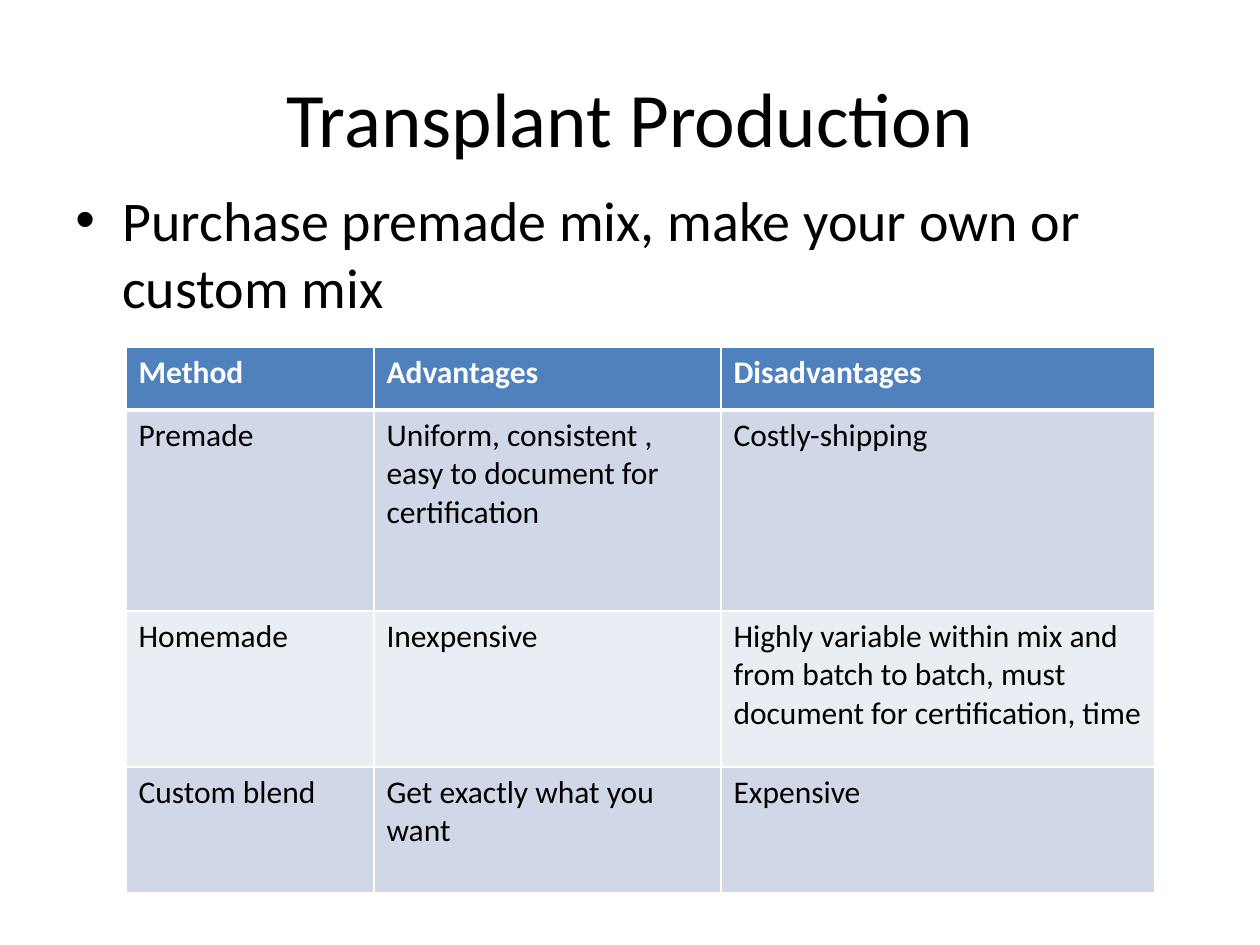
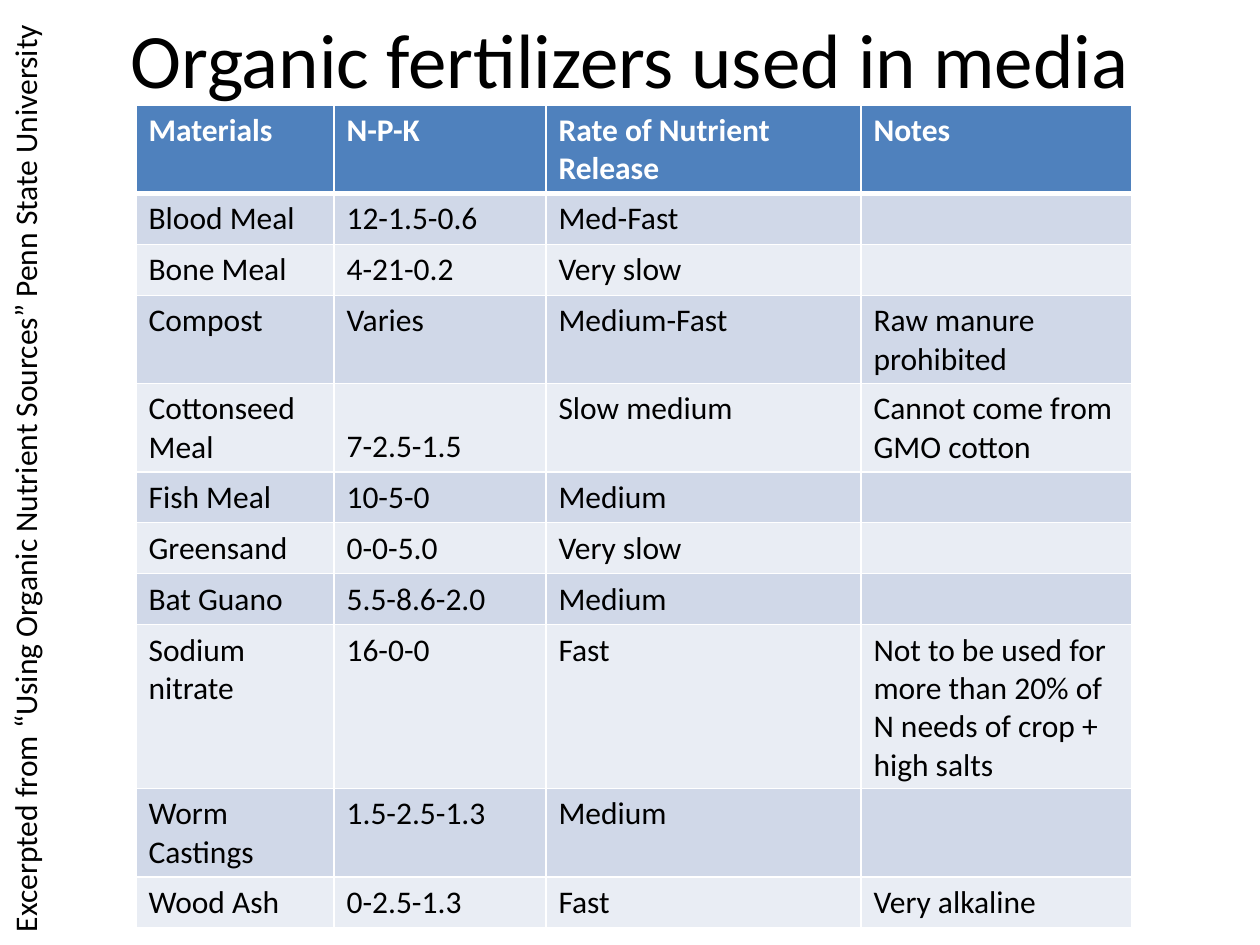
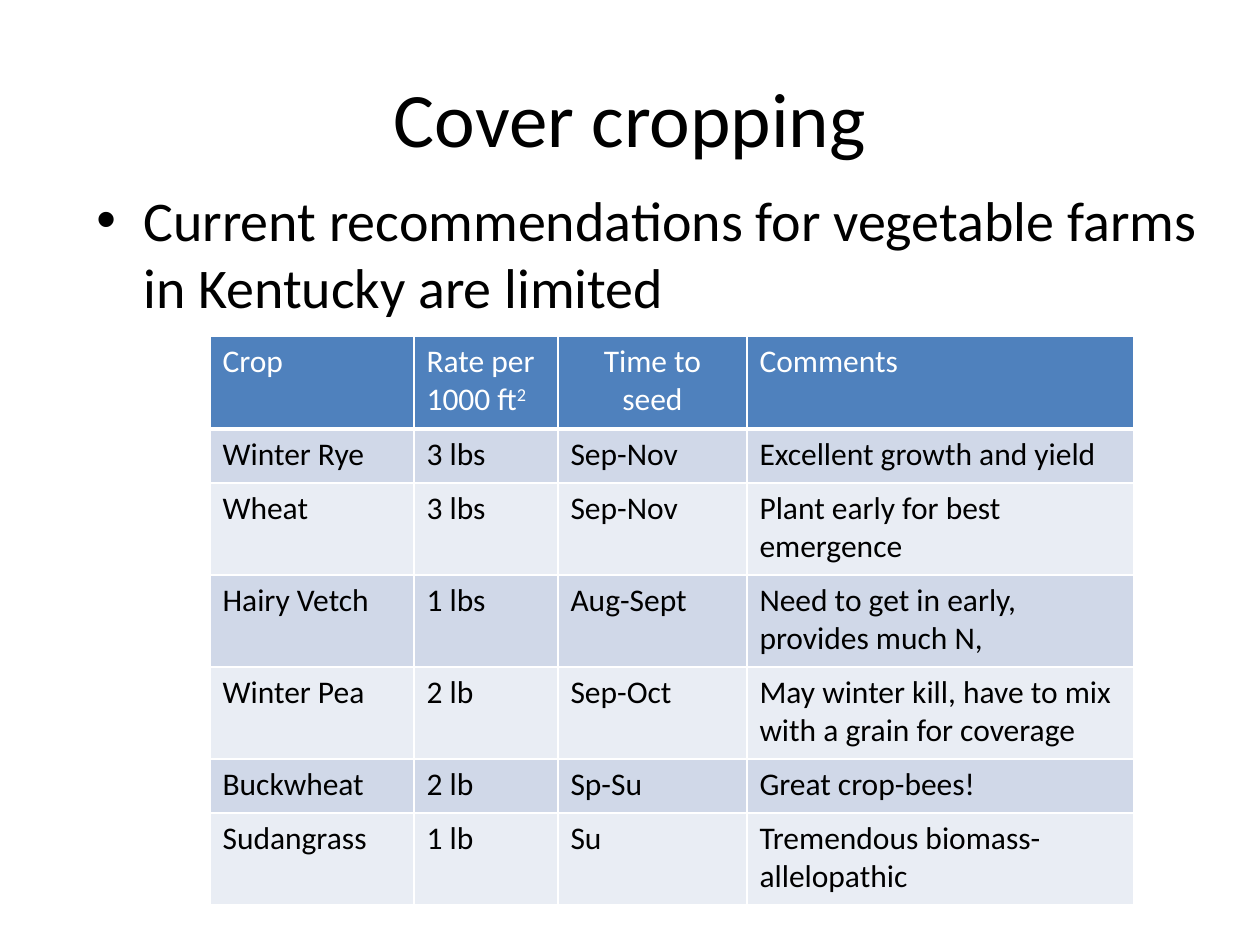
import pptx
import pptx.dml.color
import pptx.enum.text
import pptx.oxml
import pptx.oxml.ns
import pptx.util

PX = 914400 / 126
FONT = "Calibri"
BLACK, WHITE, BLUE = "000000", "FFFFFF", "4F81BD"
BANDS = ("D0D8E8", "E9EDF4")
ANCHOR = pptx.enum.text.MSO_ANCHOR
ALIGN = pptx.enum.text.PP_ALIGN


def px(n):
    return pptx.util.Emu(round(n * PX))


def rgb(value):
    return pptx.dml.color.RGBColor.from_string(value)


def element(xml):
    """Build one element of the drawing namespace."""
    tag, rest = xml[1:].split(" ", 1)
    return pptx.oxml.parse_xml(f'<{tag} {pptx.oxml.ns.nsdecls("a")} {rest}')


class Deck:
    def __init__(self):
        self.prs = pptx.Presentation()
        self.prs.slide_width, self.prs.slide_height = px(1260), px(945)
        self.s = None

    def slide(self):
        self.s = self.prs.slides.add_slide(self.prs.slide_layouts[6])

    def fill_text(self, p, text, size, color=BLACK, bold=False):
        """Fill a paragraph; text after ^ is superscript."""
        f = p.font
        f.name, f.size, f.bold = FONT, pptx.util.Pt(size), bold
        f.color.rgb = rgb(color)
        base, _, power = text.partition("^")
        if base:
            p.add_run().text = base
        if power:
            r = p.add_run()
            r.text = power
            r.font._element.set("baseline", "30000")

    def text(self, x, y, w, h, text, size, wrap=True):
        sp = self.s.shapes.add_textbox(px(x), px(y), px(w), px(h))
        tf = sp.text_frame
        tf.word_wrap = wrap
        self.fill_text(tf.paragraphs[0], text, size)
        return sp

    def title(self, text, y=38):
        tf = self.text(63, y, 1134, 158, text, 44).text_frame
        tf.vertical_anchor = ANCHOR.MIDDLE
        tf.paragraphs[0].alignment = ALIGN.CENTER

    def bullet(self, text, x=63):
        p = self.text(x, 179, 1134, 624, text, 32).text_frame.paragraphs[0]
        p.space_before = pptx.util.Pt(6.4)
        pPr = p._p.get_or_add_pPr()
        pPr.set("marL", str(px(47)))
        pPr.set("indent", str(px(-47)))
        font = pPr.find(pptx.oxml.ns.qn("a:defRPr"))
        font.addprevious(element('<a:buFont typeface="Arial"/>'))
        font.addprevious(element('<a:buChar char="•"/>'))

    def side_note(self, text):
        sp = self.text(-446, 448, 942, 51, text, 18, wrap=False)
        sp.text_frame.auto_size = pptx.enum.text.MSO_AUTO_SIZE.SHAPE_TO_FIT_TEXT
        sp.rotation = 270

    def borders(self, cell, header):
        tcPr = cell._tc.get_or_add_tcPr()
        for i, side in enumerate("LRTB"):
            width = pptx.util.Pt(3 if header and side == "B" else 1)
            tcPr.insert(i, element(
                f'<a:ln{side} w="{width}"><a:solidFill><a:srgbClr val="{WHITE}"/>'
                f'</a:solidFill></a:ln{side}>'))

    def table(self, x, y, h, cols, heights, rows, bold=True):
        sp = self.s.shapes.add_table(len(rows), len(cols), px(x), px(y),
                                     px(sum(cols)), px(h))
        t = sp.table
        t.horz_banding = False
        for col, w in zip(t.columns, cols):
            col.width = px(w)
        for i, (row, height, texts) in enumerate(zip(t.rows, heights, rows)):
            row.height = px(height)
            header = i == 0
            for cell, text in zip(row.cells, texts):
                cell.fill.solid()
                cell.fill.fore_color.rgb = rgb(BLUE if header else BANDS[(i - 1) % 2])
                self.borders(cell, header)
                self.fill_text(cell.text_frame.paragraphs[0], text, 18,
                               WHITE if header else BLACK, header and bold)
        sp.height = px(h)
        return t


def main():
    d = Deck()

    # Transplant mixes
    d.slide()
    d.title("Transplant Production")
    d.bullet("Purchase premade mix, make your own or custom mix")
    d.table(126, 347, 546, (248, 347, 434), (63, 201, 156, 126), (
        ("Method", "Advantages", "Disadvantages"),
        ("Premade", "Uniform, consistent , easy to document for certification",
         "Costly-shipping"),
        ("Homemade", "Inexpensive",
         "Highly variable within mix and from batch to batch, "
         "must document for certification, time"),
        ("Custom blend", "Get exactly what you want", "Expensive")))

    # Fertilizers
    d.slide()
    d.title("Organic fertilizers used in media", y=-21)
    fertilizers = (
        ("Materials", "N-P-K", "Rate of Nutrient Release", "Notes"),
        ("Blood Meal", "12-1.5-0.6", "Med-Fast", ""),
        ("Bone Meal", "4-21-0.2", "Very slow", ""),
        ("Compost", "Varies", "Medium-Fast", "Raw manure prohibited"),
        ("Cottonseed Meal", "7-2.5-1.5", "Slow medium", "Cannot come from GMO cotton"),
        ("Fish Meal", "10-5-0", "Medium", ""),
        ("Greensand", "0-0-5.0", "Very slow", ""),
        ("Bat Guano", "5.5-8.6-2.0", "Medium", ""),
        ("Sodium nitrate", "16-0-0", "Fast",
         "Not to be used for more than 20% of N needs of crop + high salts"),
        ("Worm Castings", "1.5-2.5-1.3", "Medium", ""),
        ("Wood Ash", "0-2.5-1.3", "Fast", "Very alkaline"))
    t = d.table(136, 105, 823, (198, 212, 315, 271), [51] * len(fertilizers), fertilizers)
    t.cell(4, 1).vertical_anchor = ANCHOR.BOTTOM
    d.side_note("Excerpted from “Using Organic Nutrient Sources” Penn State University")

    # Cover crops
    d.slide()
    d.title("Cover cropping")
    d.bullet("Current recommendations for vegetable farms in Kentucky are limited", x=84)
    t = d.table(210, 336, 567, (204, 144, 189, 387), (93, 54, 92, 92, 92, 54, 92), (
        ("Crop", "Rate per 1000 ft^2", "Time to seed", "Comments"),
        ("Winter Rye", "3 lbs", "Sep-Nov", "Excellent growth and yield"),
        ("Wheat", "3 lbs", "Sep-Nov", "Plant early for best emergence"),
        ("Hairy Vetch", "1 lbs", "Aug-Sept", "Need to get in early, provides much N,"),
        ("Winter Pea", "2 lb", "Sep-Oct",
         "May winter kill, have to mix with a grain for coverage"),
        ("Buckwheat", "2 lb", "Sp-Su", "Great crop-bees!"),
        ("Sudangrass", "1 lb", "Su", "Tremendous biomass-allelopathic")), bold=False)
    t.cell(0, 2).text_frame.paragraphs[0].alignment = ALIGN.CENTER

    d.prs.save("out.pptx")


if __name__ == "__main__":
    main()
